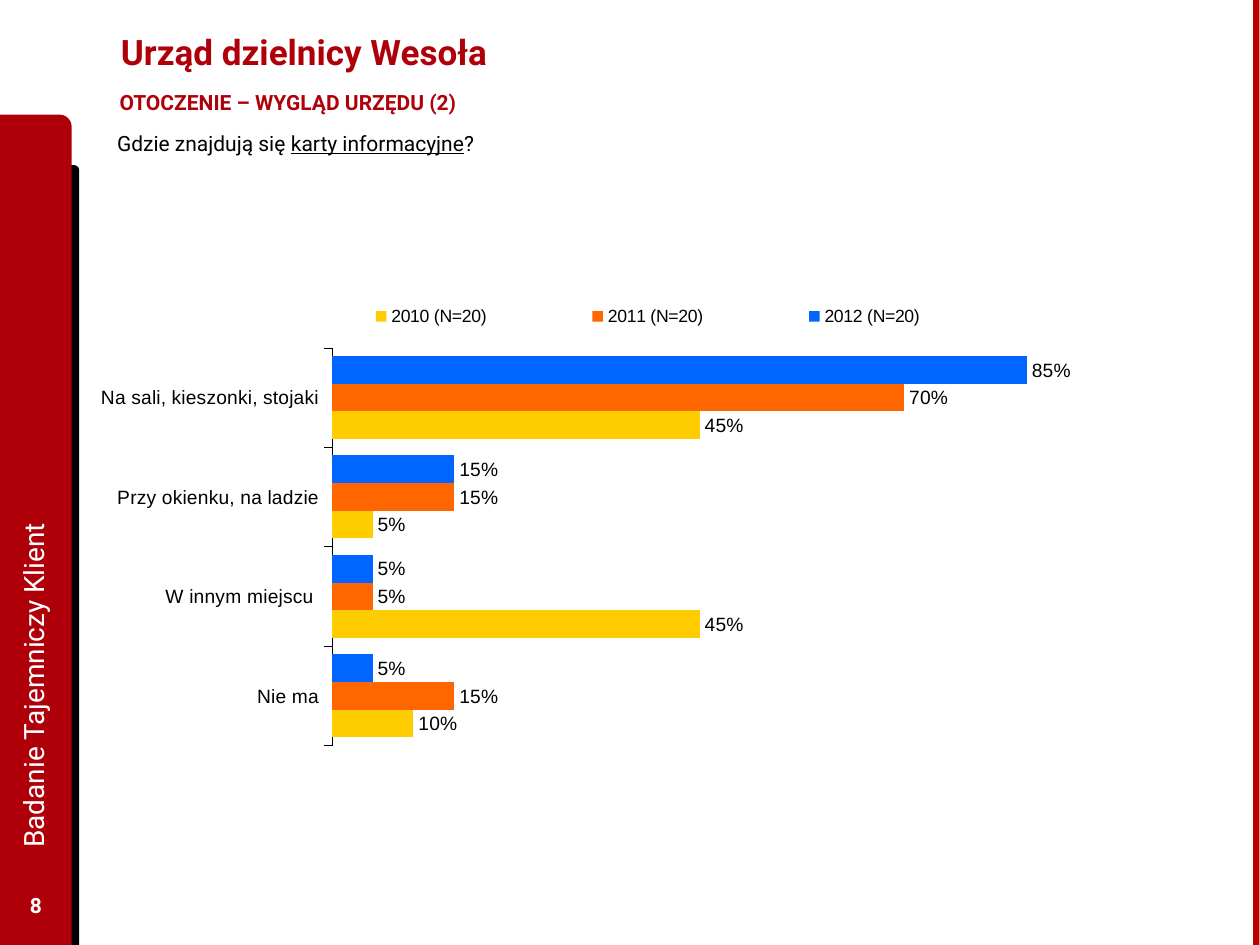
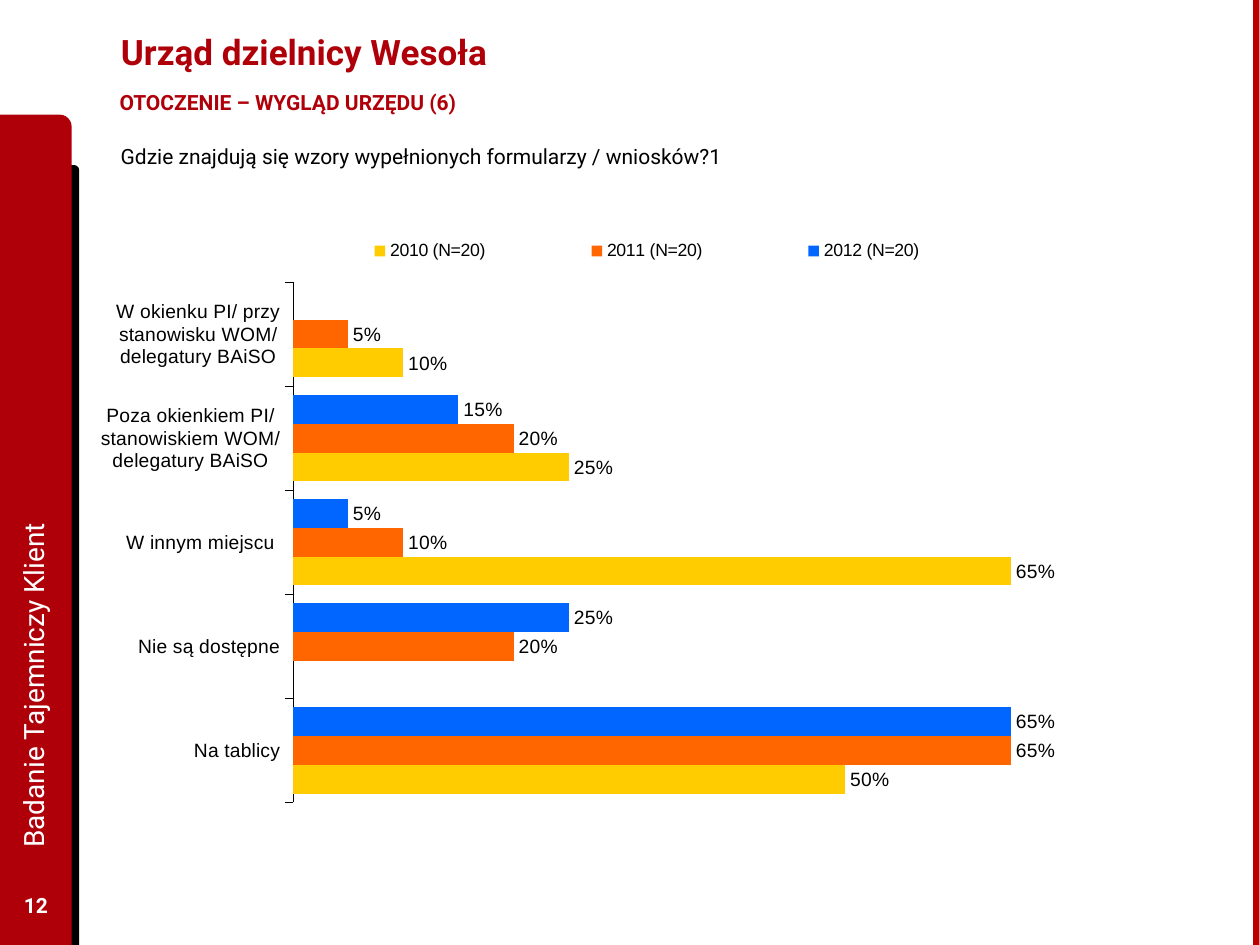
from dataclasses import dataclass

import pptx
import pptx.chart.data
import pptx.dml.color
import pptx.enum.chart
import pptx.enum.shapes
import pptx.enum.text
import pptx.oxml
import pptx.oxml.ns
import pptx.util
from pptx.util import Pt

# Shared colours and fonts
RED = pptx.dml.color.RGBColor(0xAF, 0x00, 0x0A)
EDGE_RED = pptx.dml.color.RGBColor(0xBD, 0x00, 0x00)
BLACK = pptx.dml.color.RGBColor(0x00, 0x00, 0x00)
WHITE = pptx.dml.color.RGBColor(0xFF, 0xFF, 0xFF)
BLUE = pptx.dml.color.RGBColor(0x00, 0x66, 0xFF)
ORANGE = pptx.dml.color.RGBColor(0xFF, 0x66, 0x00)
YELLOW = pptx.dml.color.RGBColor(0xFF, 0xCC, 0x00)
TEXT_FONT = "Roboto"
CHART_FONT = "Arial"

SLIDE_W, SLIDE_H = 720, 540
SERIES_STYLE = [("2012 (N=20)", BLUE), ("2011 (N=20)", ORANGE), ("2010 (N=20)", YELLOW)]
CHART_LEFT, CHART_W = 57.6, 653

MSO_SHAPE = pptx.enum.shapes.MSO_SHAPE
MSO_ANCHOR = pptx.enum.text.MSO_ANCHOR
PP_ALIGN = pptx.enum.text.PP_ALIGN


@dataclass
class Box:
    left: float
    top: float
    width: float
    height: float

    def in_points(self) -> tuple:
        return Pt(self.left), Pt(self.top), Pt(self.width), Pt(self.height)


@dataclass
class Band:
    preset: int
    box: Box
    color: pptx.dml.color.RGBColor


@dataclass
class TextPart:
    text: str
    underline: bool = False


@dataclass
class BarChart:
    top: float
    height: float
    plot: Box           # fractions of the chart area
    legend: Box         # fractions of the chart area
    axis_max: float
    categories: list
    values: list        # one list per entry of SERIES_STYLE


@dataclass
class SurveySlide:
    number: int
    subtitle: str
    question: list
    question_box: Box
    chart: BarChart


BANDS = [
    Band(MSO_SHAPE.ROUND_1_RECTANGLE, Box(28, 94.3, 17.3, SLIDE_H - 94.3), BLACK),
    Band(MSO_SHAPE.ROUND_1_RECTANGLE, Box(0, 65.5, 41, SLIDE_H - 65.5), RED),
    Band(MSO_SHAPE.RECTANGLE, Box(SLIDE_W - 3.9, 0, 3.6, SLIDE_H), EDGE_RED),
]

SLIDES = [
    SurveySlide(
        8, "OTOCZENIE – WYGLĄD URZĘDU (2)",
        [TextPart("Gdzie znajdują się "), TextPart("karty informacyjne", True), TextPart("?")],
        Box(59.8, 71.3, 442.8, 21.6),
        BarChart(
            170.6, 255.6, Box(0.201, 0.113, 0.645, 0.89), Box(0.152, 0.005, 0.652, 0.07), 0.9,
            ["Na sali, kieszonki, stojaki", "Przy okienku, na ladzie", "W innym miejscu ", "Nie ma"],
            [[0.85, 0.15, 0.05, 0.05], [0.7, 0.15, 0.05, 0.15], [0.45, 0.05, 0.45, 0.1]],
        ),
    ),
    SurveySlide(
        12, "OTOCZENIE – WYGLĄD URZĘDU (6)",
        [TextPart("Gdzie znajdują się wzory wypełnionych formularzy / wniosków?1")],
        Box(61.9, 78.5, 465.8, 21.6),
        BarChart(
            133.2, 325.4, Box(0.168, 0.089, 0.677, 0.914), Box(0.152, 0.004, 0.652, 0.055), 0.7,
            ["W okienku PI/ przy stanowisku WOM/ delegatury BAiSO",
             "Poza okienkiem PI/ stanowiskiem WOM/ delegatury BAiSO",
             "W innym miejscu ", "Nie są dostępne", "Na tablicy"],
            [[None, 0.15, 0.05, 0.25, 0.65], [0.05, 0.2, 0.1, 0.2, 0.65],
             [0.1, 0.25, 0.65, None, 0.5]],
        ),
    ),
]


def style_font(font, size: float, color, name: str = TEXT_FONT, bold: bool = False) -> None:
    font.name, font.size, font.bold = name, Pt(size), bold
    font.color.rgb = color


def add_runs(tf, parts: list, size: float, color, bold: bool = False) -> None:
    for part in parts:
        r = tf.paragraphs[0].add_run()
        r.text = part.text
        style_font(r.font, size, color, bold=bold)
        if part.underline:
            r.font.underline = True


def add_text(s, box: Box, parts: list, size: float, color, bold: bool = False,
             anchor=MSO_ANCHOR.TOP, align=PP_ALIGN.LEFT, rotation: float = 0):
    sp = s.shapes.add_textbox(*box.in_points())
    sp.rotation = rotation
    tf = sp.text_frame
    tf.word_wrap = True
    tf.vertical_anchor = anchor
    tf.paragraphs[0].alignment = align
    add_runs(tf, parts, size, color, bold)
    return tf


def add_band(s, band: Band) -> None:
    sp = s.shapes.add_shape(band.preset, *band.box.in_points())
    sp.shadow.inherit = False
    sp.fill.solid()
    sp.fill.fore_color.rgb = band.color
    sp.line.fill.background()


def add_frame(s, number: int) -> None:
    """Side bands, slide number and the vertical study name."""
    for band in BANDS:
        add_band(s, band)
    add_text(s, Box(0, 502.6, 41, 28.8), [TextPart(str(number))], 12, WHITE, True,
             MSO_ANCHOR.MIDDLE, PP_ALIGN.CENTER)
    add_text(s, Box(-188.6, 265.7, 414.7, 36.7), [TextPart("Badanie Tajemniczy Klient")],
             16, WHITE, anchor=MSO_ANCHOR.MIDDLE, rotation=270)


def add_headings(s, subtitle: str) -> None:
    title = s.shapes.title
    title.left, title.top, title.width, title.height = Box(61.9, 3.6, 559.4, 51.8).in_points()
    tf = title.text_frame
    tf.auto_size = pptx.enum.text.MSO_AUTO_SIZE.NONE
    tf.vertical_anchor = MSO_ANCHOR.MIDDLE
    tf.paragraphs[0].alignment = PP_ALIGN.LEFT
    add_runs(tf, [TextPart("Urząd dzielnicy Wesoła")], 20, RED, True)

    tf = add_text(s, Box(54, 47.5, 277.2, 23.8), [TextPart(subtitle)], 12, RED, True)
    tf.word_wrap = False
    tf.margin_left = tf.margin_right = Pt(14.4)


def set_layout(parent, index: int, area: Box, inner: bool = False) -> None:
    """Place a chart part by fractions of the chart area."""
    for old in parent.findall(pptx.oxml.ns.qn("c:layout")):
        parent.remove(old)
    target = '<c:layoutTarget val="inner"/>' if inner else ""
    parent.insert(index, pptx.oxml.parse_xml(
        f'<c:layout {pptx.oxml.ns.nsdecls("c")}><c:manualLayout>{target}'
        '<c:xMode val="edge"/><c:yMode val="edge"/>'
        f'<c:x val="{area.left}"/><c:y val="{area.top}"/>'
        f'<c:w val="{area.width}"/><c:h val="{area.height}"/>'
        '</c:manualLayout></c:layout>'))


def add_bar_chart(s, bars: BarChart) -> None:
    data = pptx.chart.data.CategoryChartData(number_format="0%")
    data.categories = bars.categories
    for (name, _), values in zip(SERIES_STYLE, bars.values):
        data.add_series(name, values)
    box = Box(CHART_LEFT, bars.top, CHART_W, bars.height)
    chart = s.shapes.add_chart(pptx.enum.chart.XL_CHART_TYPE.BAR_CLUSTERED,
                               *box.in_points(), data).chart
    chart.has_title = False
    style_font(chart.font, 11, BLACK, CHART_FONT)

    # Bars and value labels
    plot = chart.plots[0]
    plot.gap_width = 60
    plot.vary_by_categories = False
    for series, (_, color) in zip(plot.series, SERIES_STYLE):
        series.format.fill.solid()
        series.format.fill.fore_color.rgb = color
        labels = series.data_labels
        labels.show_value = True
        labels.number_format, labels.number_format_is_linked = "0%", False
        labels.position = pptx.enum.chart.XL_LABEL_POSITION.OUTSIDE_END
        style_font(labels.font, 11, BLACK, CHART_FONT)

    # Axes
    axis = chart.category_axis
    axis.reverse_order = True
    axis.major_tick_mark = pptx.enum.chart.XL_TICK_MARK.OUTSIDE
    axis.format.line.color.rgb = BLACK
    axis.format.line.width = Pt(0.23)
    style_font(axis.tick_labels.font, 11, BLACK, CHART_FONT)
    axis = chart.value_axis
    axis.visible = False
    axis.has_major_gridlines = False
    axis.minimum_scale, axis.maximum_scale = 0, bars.axis_max

    # Legend and placement
    chart.has_legend = True
    chart.legend.position = pptx.enum.chart.XL_LEGEND_POSITION.TOP
    chart.legend.include_in_layout = False
    style_font(chart.legend.font, 10.1, BLACK, CHART_FONT)
    root = chart.element.find(pptx.oxml.ns.qn("c:chart"))
    set_layout(root.find(pptx.oxml.ns.qn("c:plotArea")), 0, bars.plot, inner=True)
    set_layout(root.find(pptx.oxml.ns.qn("c:legend")), 1, bars.legend)


def main() -> None:
    prs = pptx.Presentation()
    prs.slide_width, prs.slide_height = Pt(SLIDE_W), Pt(SLIDE_H)
    for survey in SLIDES:
        s = prs.slides.add_slide(prs.slide_layouts.get_by_name("Title Only"))
        add_frame(s, survey.number)
        add_headings(s, survey.subtitle)
        add_text(s, survey.question_box, survey.question, 12, BLACK)
        add_bar_chart(s, survey.chart)
    prs.save("out.pptx")


if __name__ == "__main__":
    main()
